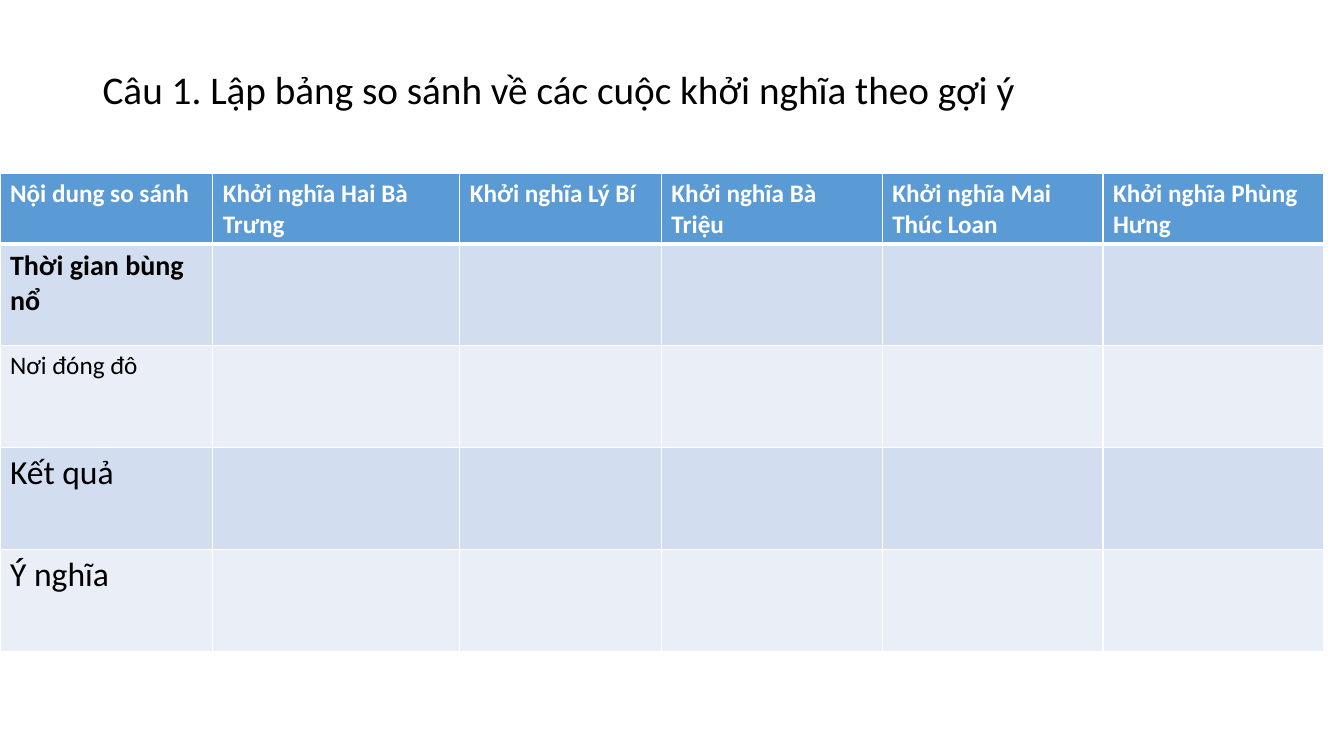
from lxml.etree import SubElement
from pptx import Presentation
from pptx.dml.color import RGBColor
from pptx.enum.text import MSO_ANCHOR
from pptx.oxml.ns import qn
from pptx.util import Inches, Pt

COLORS = {
    "text": "000000",
    "white": "FFFFFF",
    "header": "5B9BD5",
    "band_dark": "D2DEEF",
    "band_light": "EAEFF7",
}
FONT = "Calibri"
HEADERS = [
    "Nội dung so sánh",
    "Khởi nghĩa Hai Bà Trưng",
    "Khởi nghĩa Lý Bí",
    "Khởi nghĩa Bà Triệu",
    "Khởi nghĩa Mai Thúc Loan",
    "Khởi nghĩa Phùng Hưng",
]
CRITERIA = [
    ("Thời gian bùng nổ", 20, True),
    ("Nơi đóng đô", 18, False),
    ("Kết quả", 24, False),
    ("Ý nghĩa", 24, False),
]
COLUMN_WIDTHS = [2.11, 2.45, 2, 2.19, 2.19, 2.19]
ROW_HEIGHTS = [0.63] + [1.01] * len(CRITERIA)


def write(frame, text, size=18, color="text", bold=False, line_spacing=None):
    para = frame.paragraphs[0]
    para.line_spacing = line_spacing
    span = para.add_run()
    span.text = text
    span.font.name = FONT
    span.font.size = Pt(size)
    span.font.bold = bold
    span.font.color.rgb = RGBColor.from_string(COLORS[color])


class SlideBuilder:
    def __init__(self, page):
        self.page = page

    def title(self, text, left, top, width, height):
        box = self.page.shapes.add_textbox(
            Inches(left), Inches(top), Inches(width), Inches(height)
        )
        frame = box.text_frame
        frame.word_wrap = True
        frame.vertical_anchor = MSO_ANCHOR.MIDDLE
        frame.margin_bottom = Inches(0.47)
        write(frame, text, size=28, line_spacing=0.9)

    def table(self, left, top, width, height):
        holder = self.page.shapes.add_table(
            len(ROW_HEIGHTS), len(COLUMN_WIDTHS),
            Inches(left), Inches(top), Inches(width), Inches(height),
        )
        grid = holder.table
        for column, column_width in zip(grid.columns, COLUMN_WIDTHS):
            column.width = Inches(column_width)
        for row, row_height in zip(grid.rows, ROW_HEIGHTS):
            row.height = Inches(row_height)
        holder.height = Inches(height)
        return grid

    def cell(self, cell, fill, top_line=1, bottom_line=1):
        properties = cell._tc.get_or_add_tcPr()
        sides = {"lnL": 1, "lnR": 1, "lnT": top_line, "lnB": bottom_line}
        for side, weight in sides.items():
            line = SubElement(properties, qn(f"a:{side}"), w=str(Pt(weight)))
            solid = SubElement(line, qn("a:solidFill"))
            SubElement(solid, qn("a:srgbClr"), val=COLORS["white"])
        cell.fill.solid()
        cell.fill.fore_color.rgb = RGBColor.from_string(COLORS[fill])


def main():
    deck = Presentation()
    deck.slide_width = Inches(13.33)
    deck.slide_height = Inches(7.5)
    builder = SlideBuilder(deck.slides.add_slide(deck.slide_layouts[6]))

    builder.title(
        "Câu 1. Lập bảng so sánh về các cuộc khởi nghĩa theo gợi ý",
        0.92, 0.4, 11.5, 1.45,
    )
    grid = builder.table(0, 1.72, 13.11, 4.74)
    for column, text in enumerate(HEADERS):
        cell = grid.cell(0, column)
        builder.cell(cell, "header", bottom_line=3)
        write(cell.text_frame, text, color="white", bold=True)
    for row, (text, size, bold) in enumerate(CRITERIA, start=1):
        band = "band_dark" if row % 2 else "band_light"
        for column in range(len(HEADERS)):
            builder.cell(grid.cell(row, column), band, top_line=3 if row == 1 else 1)
        write(grid.cell(row, 0).text_frame, text, size=size, bold=bold)

    deck.save("out.pptx")


if __name__ == "__main__":
    main()
